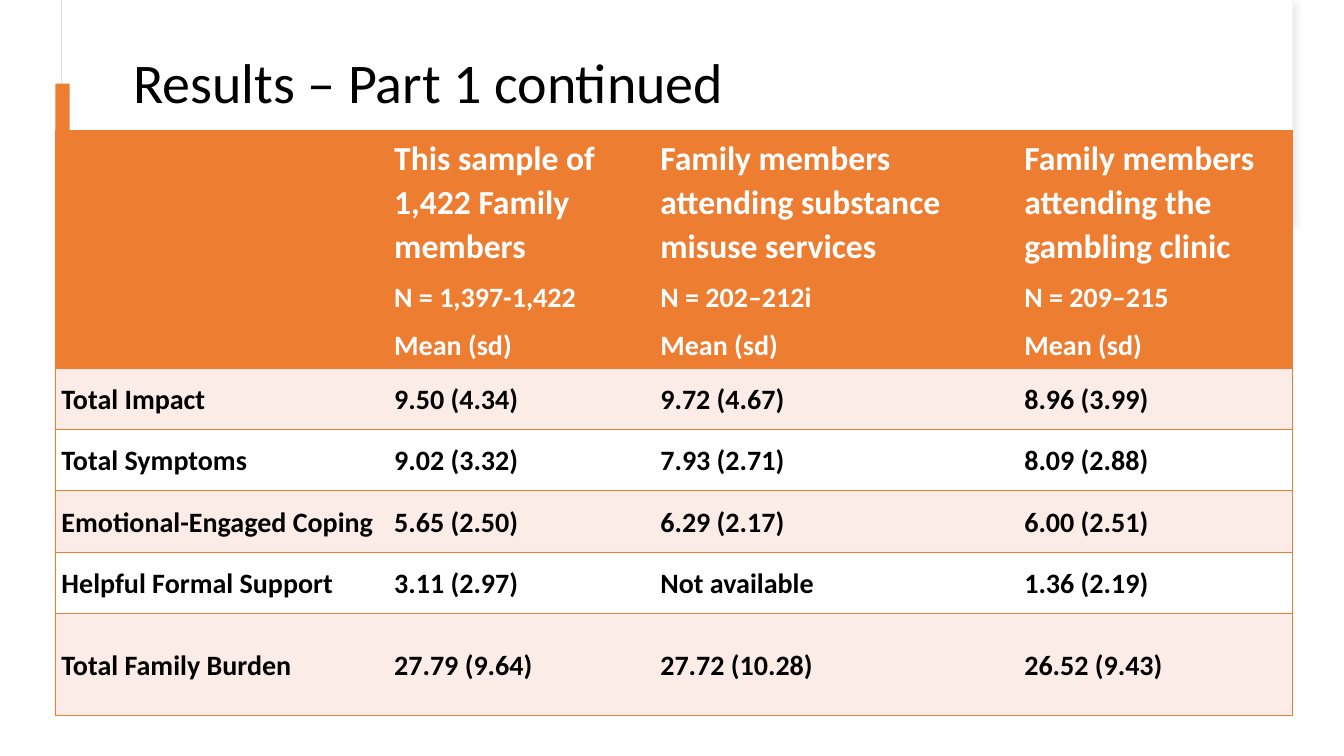
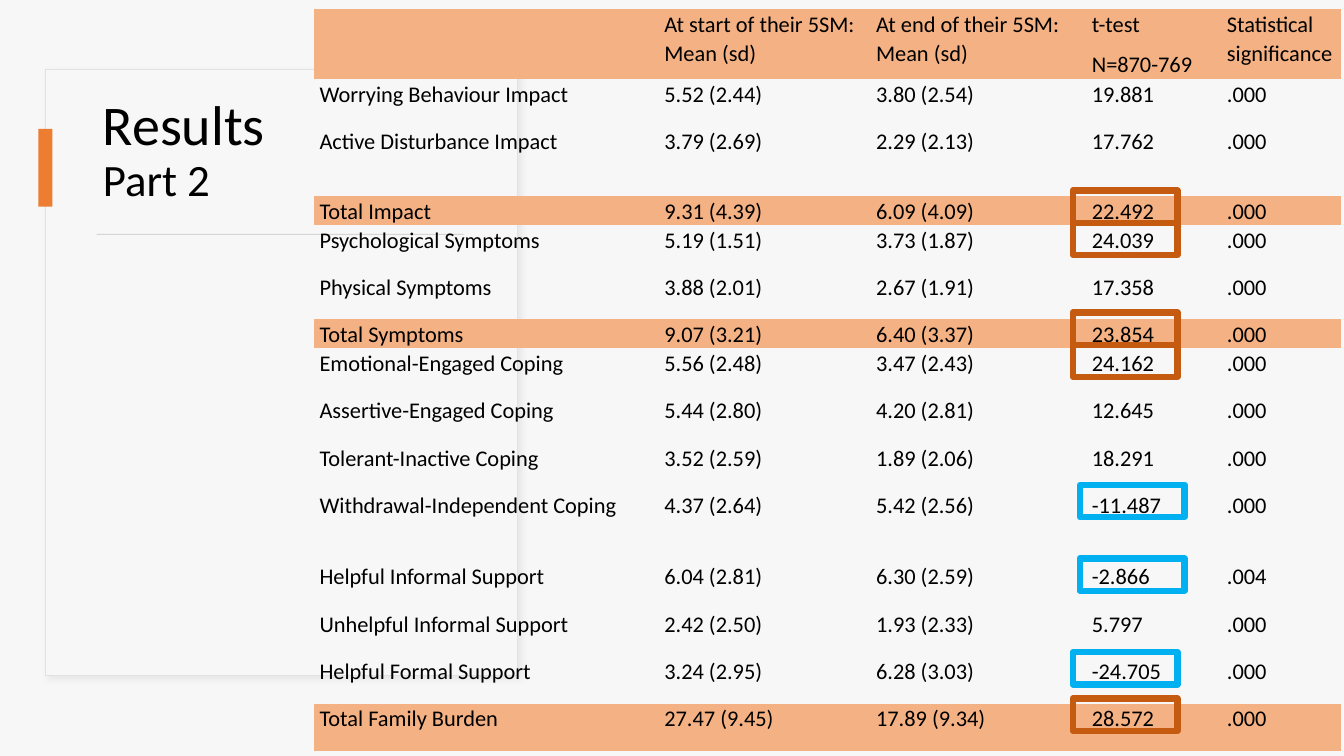
from dataclasses import dataclass

from lxml import etree
from pptx import Presentation
from pptx.dml.color import RGBColor as Rgb
from pptx.enum.shapes import MSO_SHAPE as Shape
from pptx.enum.text import MSO_ANCHOR as Anchor, MSO_AUTO_SIZE as AutoSize, PP_ALIGN as Align
from pptx.oxml import parse_xml
from pptx.oxml.ns import nsdecls, qn
from pptx.util import Inches, Pt


@dataclass(frozen=True)
class Theme:
    font: str = "Calibri"
    ink: str = "000000"
    white: str = "FFFFFF"
    mist: str = "F7F7F7"
    panel_edge: str = "E1E1E1"
    shadow: str = "D9D9D9"
    rule: str = "D5D5D5"
    accent: str = "ED7D31"
    blush: str = "FCECE8"
    peach: str = "F4B183"
    decrease: str = "C55A11"
    increase: str = "00B0F0"
    title: int = 40
    subtitle: int = 32
    header: int = 24
    body: int = 20
    dense: int = 16


THEME = Theme()
NO_STYLE = "{2D5ABB26-0587-4C30-8999-92F81FD0307C}"

SAMPLE_COLUMNS = [3.3, 2.64, 3.61, 2.72]
SAMPLE_HEIGHTS = [2.35] + [0.61] * 4 + [1.01]
SAMPLE_ROWS = [
    ["",
     "This sample of 1,422 Family members\nN = 1,397-1,422\nMean (sd)",
     "Family members attending substance misuse services\nN = 202–212i\nMean (sd)",
     "Family members attending the gambling clinic\nN = 209–215\nMean (sd)"],
    ["Total Impact", "9.50 (4.34)", "9.72 (4.67)", "8.96 (3.99)"],
    ["Total Symptoms", "9.02 (3.32)", "7.93 (2.71)", "8.09 (2.88)"],
    ["Emotional-Engaged Coping", "5.65 (2.50)", "6.29 (2.17)", "6.00 (2.51)"],
    ["Helpful Formal Support", "3.11 (2.97)", "Not available", "1.36 (2.19)"],
    ["Total Family Burden", "27.79 (9.64)", "27.72 (10.28)", "26.52 (9.43)"],
]

CHANGE_COLUMNS = [3.42, 2.1, 2.14, 1.34, 1.19]
CHANGE_HEIGHTS = [0.69, 0.47, 0.69, 0.23, 0.47, 0.46, 0.23,
                  0.47, 0.47, 0.47, 0.71, 0.47, 0.47, 0.47, 0.47]
CHANGE_ROWS = [
    ["", "At start of their 5SM: Mean (sd)", "At end of their 5SM: Mean (sd)",
     "t-test\nN=870-769", "Statistical significance"],
    ["Worrying Behaviour Impact", "5.52 (2.44)", "3.80 (2.54)", "19.881", ".000"],
    ["Active Disturbance Impact", "3.79 (2.69)", "2.29 (2.13)", "17.762", ".000"],
    ["Total Impact", "9.31 (4.39)", "6.09 (4.09)", "22.492", ".000"],
    ["Psychological Symptoms", "5.19 (1.51)", "3.73 (1.87)", "24.039", ".000"],
    ["Physical Symptoms", "3.88 (2.01)", "2.67 (1.91)", "17.358", ".000"],
    ["Total Symptoms", "9.07 (3.21)", "6.40 (3.37)", "23.854", ".000"],
    ["Emotional-Engaged Coping", "5.56 (2.48)", "3.47 (2.43)", "24.162", ".000"],
    ["Assertive-Engaged Coping", "5.44 (2.80)", "4.20 (2.81)", "12.645", ".000"],
    ["Tolerant-Inactive Coping", "3.52 (2.59)", "1.89 (2.06)", "18.291", ".000"],
    ["Withdrawal-Independent Coping", "4.37 (2.64)", "5.42 (2.56)", "-11.487", ".000"],
    ["Helpful Informal Support", "6.04 (2.81)", "6.30 (2.59)", "-2.866", ".004"],
    ["Unhelpful Informal Support", "2.42 (2.50)", "1.93 (2.33)", "5.797", ".000"],
    ["Helpful Formal Support", "3.24 (2.95)", "6.28 (3.03)", "-24.705", ".000"],
    ["Total Family Burden", "27.47 (9.45)", "17.89 (9.34)", "28.572", ".000"],
]
HIGHLIGHTS = [
    (10.64, 1.89, THEME.decrease),
    (10.64, 2.21, THEME.decrease),
    (10.64, 3.1, THEME.decrease),
    (10.64, 3.42, THEME.decrease),
    (10.71, 4.81, THEME.increase),
    (10.71, 5.54, THEME.increase),
    (10.64, 6.47, THEME.increase),
    (10.64, 6.93, THEME.decrease),
]


def add_rect(slide, box, fill=None, line=None, weight=0.75):
    rect = slide.shapes.add_shape(Shape.RECTANGLE, *map(Inches, box))
    rect.shadow.inherit = False
    if fill:
        rect.fill.solid()
        rect.fill.fore_color.rgb = Rgb.from_string(fill)
    else:
        rect.fill.background()
    if line:
        rect.line.color.rgb = Rgb.from_string(line)
        rect.line.width = Pt(weight)
    else:
        rect.line.fill.background()
    return rect


def add_panel(slide, box, fill):
    panel = add_rect(slide, box, fill, THEME.panel_edge)
    effects = panel._element.spPr.find(qn("a:effectLst"))
    effects.append(parse_xml(
        f'<a:outerShdw {nsdecls("a")} blurRad="{Pt(4)}" dist="{Pt(3)}" dir="2700000" '
        f'algn="tl" rotWithShape="0"><a:srgbClr val="{THEME.shadow}">'
        '<a:alpha val="50000"/></a:srgbClr></a:outerShdw>'))


def style_runs(paragraph, size, color, bold=False):
    for run in paragraph.runs:
        run.font.name = THEME.font
        run.font.size = Pt(size)
        run.font.bold = bold
        run.font.color.rgb = Rgb.from_string(color)


def place_title(slide, text, box):
    title = slide.shapes.title
    title.left, title.top, title.width, title.height = map(Inches, box)
    frame = title.text_frame
    frame.text = text
    frame.word_wrap = True
    frame.auto_size = AutoSize.NONE
    frame.vertical_anchor = Anchor.MIDDLE
    heading = frame.paragraphs[0]
    heading.alignment = Align.LEFT
    heading.line_spacing = 0.9
    style_runs(heading, THEME.title, THEME.ink)
    for subtitle in heading.runs[1:]:
        subtitle.font.size = Pt(THEME.subtitle)
    slide.shapes._spTree.append(title._element)


def add_accent(slide, left, top):
    add_rect(slide, (left, top, 0.14, 0.77), THEME.accent)


def add_grid(slide, left, top, columns, heights, rows):
    grid = slide.shapes.add_table(
        len(heights), len(columns), Inches(left), Inches(top),
        Inches(sum(columns)), Inches(sum(heights))).table
    grid.first_row = grid.horz_banding = False
    grid._tbl.tblPr.find(qn("a:tableStyleId")).text = NO_STYLE
    for column, width in zip(grid.columns, columns):
        column.width = Inches(width)
    for row, height, texts in zip(grid.rows, heights, rows):
        row.height = Inches(height)
        for cell, text in zip(row.cells, texts):
            cell.text_frame.text = text
    return grid


def format_cell(cell, fill, sizes, color, bold=False, anchor=Anchor.TOP):
    cell.margin_left = cell.margin_right = Inches(0.06)
    cell.margin_top = cell.margin_bottom = 0
    cell.vertical_anchor = anchor
    if fill:
        cell.fill.solid()
        cell.fill.fore_color.rgb = Rgb.from_string(fill)
    else:
        cell.fill.background()
    for index, paragraph in enumerate(cell.text_frame.paragraphs):
        paragraph.line_spacing = 1.07
        paragraph.space_after = Pt(8)
        style_runs(paragraph, sizes[min(index, len(sizes) - 1)], color, bold)


def border_cell(cell, sides):
    properties = cell._tc.get_or_add_tcPr()
    for position, side in enumerate(sides):
        edge = etree.Element(qn(f"a:ln{side}"), w=str(Pt(1)))
        paint = etree.SubElement(edge, qn("a:solidFill"))
        etree.SubElement(paint, qn("a:srgbClr"), val=THEME.accent)
        properties.insert(position, edge)


def start_slide(deck, background):
    slide = deck.slides.add_slide(deck.slide_layouts[5])
    slide.background.fill.solid()
    slide.background.fill.fore_color.rgb = Rgb.from_string(background)
    return slide


def build_sample_comparison(deck):
    slide = start_slide(deck, THEME.white)
    add_panel(slide, (0.61, 0, 12.21, 2.21), THEME.white)
    add_rect(slide, (0.62, 0, 12.2, 2.2), THEME.white)
    place_title(slide, "Results – Part 1 continued", (1.22, 0.27, 11.12, 1.16))
    add_accent(slide, 0.55, 0.83)
    grid = add_grid(slide, 0.55, 1.3, SAMPLE_COLUMNS, SAMPLE_HEIGHTS, SAMPLE_ROWS)
    last = len(SAMPLE_COLUMNS) - 1
    for r, row in enumerate(grid.rows):
        for c, cell in enumerate(row.cells):
            if r == 0:
                format_cell(cell, THEME.accent, (THEME.header, THEME.body),
                            THEME.white, True, Anchor.MIDDLE)
            else:
                format_cell(cell, THEME.blush if r % 2 else THEME.white,
                            (THEME.body,), THEME.ink, True, Anchor.MIDDLE)
            border_cell(cell, {0: "LTB", last: "RTB"}.get(c, "TB"))


def build_change_over_time(deck):
    slide = start_slide(deck, THEME.mist)
    add_panel(slide, (0.45, 0.69, 4.68, 6.01), THEME.mist)
    place_title(slide, "Results\vPart 2", (0.92, 0.9, 3.73, 1.21))
    add_accent(slide, 0.38, 1.28)
    add_rect(slide, (0.96, 2.32, 3.64, 0.01), THEME.rule)
    grid = add_grid(slide, 3.11, 0.09, CHANGE_COLUMNS, CHANGE_HEIGHTS, CHANGE_ROWS)
    for row, texts in zip(grid.rows, CHANGE_ROWS):
        banded = not texts[0] or texts[0].startswith("Total")
        for cell in row.cells:
            format_cell(cell, THEME.peach if banded else None, (THEME.dense,), THEME.ink)
    for left, top, color in HIGHLIGHTS:
        add_rect(slide, (left, top, 1.04, 0.32), line=color, weight=4.5)


def main():
    deck = Presentation()
    deck.slide_width, deck.slide_height = Inches(13.33), Inches(7.5)
    build_sample_comparison(deck)
    build_change_over_time(deck)
    deck.save("out.pptx")


if __name__ == "__main__":
    main()
